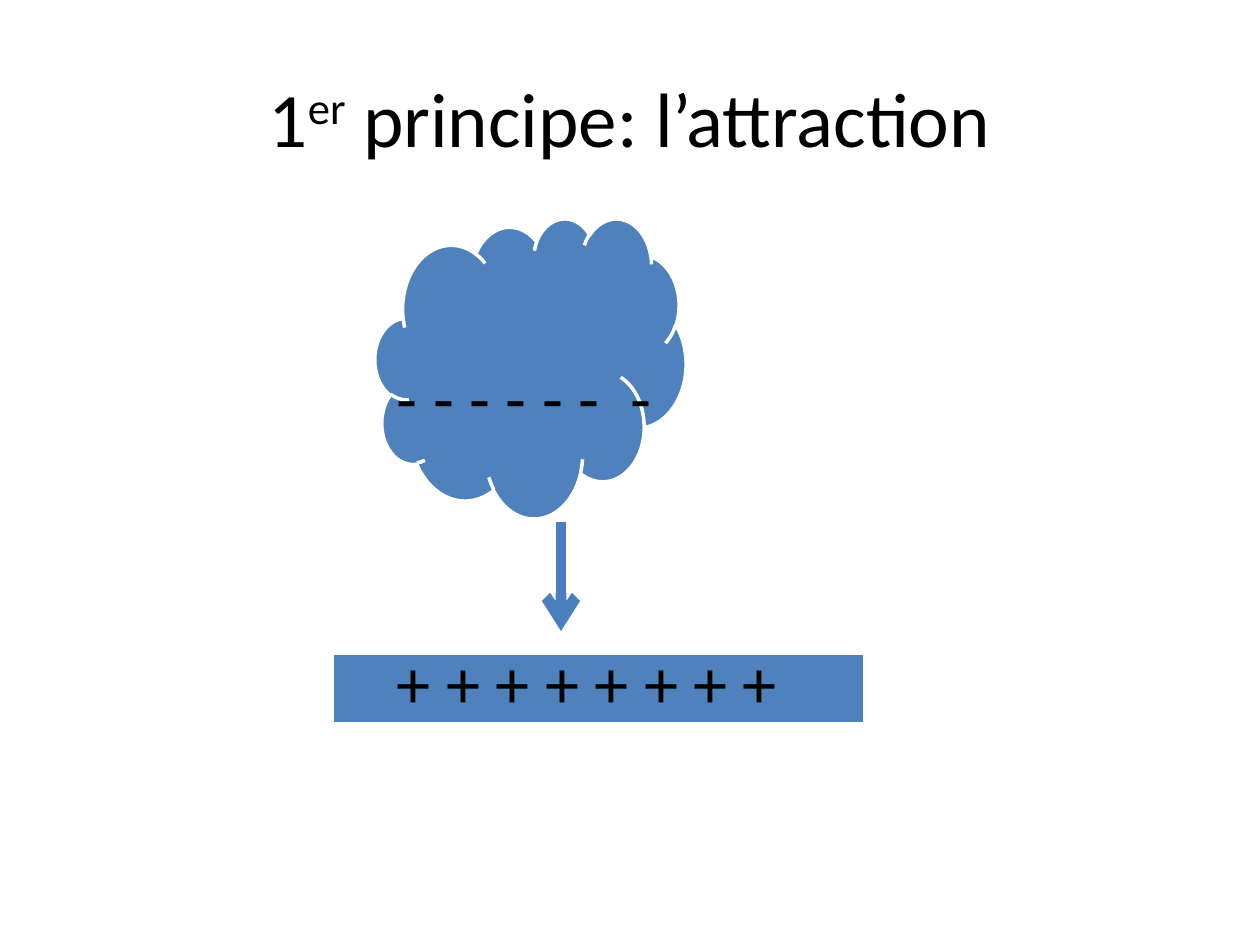
from dataclasses import dataclass

from lxml.etree import SubElement
from pptx import Presentation
from pptx.dml.color import RGBColor
from pptx.enum.shapes import MSO_CONNECTOR, MSO_SHAPE
from pptx.enum.text import MSO_ANCHOR, PP_ALIGN
from pptx.oxml.ns import qn
from pptx.util import Inches, Pt


@dataclass(frozen=True)
class Theme:
    font: str = "Calibri"
    ink: str = "000000"
    fill: str = "4F81BD"
    edge: str = "FFFFFF"
    arrow: str = "4B7EBC"
    title: int = 44
    sign: int = 39


def px(size):
    return Inches(size / 126)


def color(code):
    return RGBColor.from_string(code)


class Board:
    def __init__(self, slide, theme):
        self.slide = slide
        self.theme = theme

    def group(self):
        return Board(self.slide.shapes.add_group_shape(), self.theme)

    def text(self, box, runs, size, align=PP_ALIGN.LEFT, inset=(13, 6, 13, 6), space=1.0):
        frame = self.slide.shapes.add_textbox(*map(px, box)).text_frame
        frame.word_wrap = True
        frame.vertical_anchor = MSO_ANCHOR.MIDDLE
        (frame.margin_left, frame.margin_top,
         frame.margin_right, frame.margin_bottom) = map(px, inset)
        para = frame.paragraphs[0]
        para.alignment = align
        para.line_spacing = space
        para.font.name = self.theme.font
        para.font.size = Pt(size)
        para.font.color.rgb = color(self.theme.ink)
        for words, style in runs:
            run = para.add_run()
            run.text = words
            for key, value in style.items():
                run._r.get_or_add_rPr().set(key, value)

    def signs(self, box, runs):
        self.text(box, runs, self.theme.sign, inset=(38, 0, 38, 38), space=0.9)

    def shape(self, kind, box):
        shape = self.slide.shapes.add_shape(kind, *map(px, box))
        shape.shadow.inherit = False
        shape.fill.solid()
        shape.fill.fore_color.rgb = color(self.theme.fill)
        shape.line.color.rgb = color(self.theme.edge)
        shape.line.width = Pt(2)

    def arrow(self, start, end, width):
        link = self.slide.shapes.add_connector(
            MSO_CONNECTOR.STRAIGHT, *map(px, start + end))
        link.line.color.rgb = color(self.theme.arrow)
        link.line.width = Pt(width)
        frame = link._element.spPr
        SubElement(frame.get_or_add_ln(), qn("a:tailEnd"), type="arrow")
        SubElement(frame, qn("a:effectLst"))


def main():
    deck = Presentation()
    deck.slide_width, deck.slide_height = px(1260), px(945)
    theme = Theme()
    board = Board(deck.slides.add_slide(deck.slide_layouts[6]), theme)

    title = [("1", {}), ("er", {"baseline": "30000"}), (" principe: l’attraction", {})]
    board.text((63, 38, 1134, 158), title, theme.title, PP_ALIGN.CENTER)

    charge = board.group()
    charge.shape(MSO_SHAPE.CLOUD, (375, 218, 311, 300))
    minus = [("- - - - - -", {}), (" ", {"spc": "880"}), ("-", {})]
    charge.signs((359, 338, 336, 165), minus)
    charge.shape(MSO_SHAPE.MATH_MINUS, (236, 539, 725, 300))
    charge.signs((359, 592, 528, 226), [("+ + + + + + + +", {})])

    board.arrow((561, 522), (561, 631), 6.25)
    deck.save("out.pptx")


if __name__ == "__main__":
    main()
